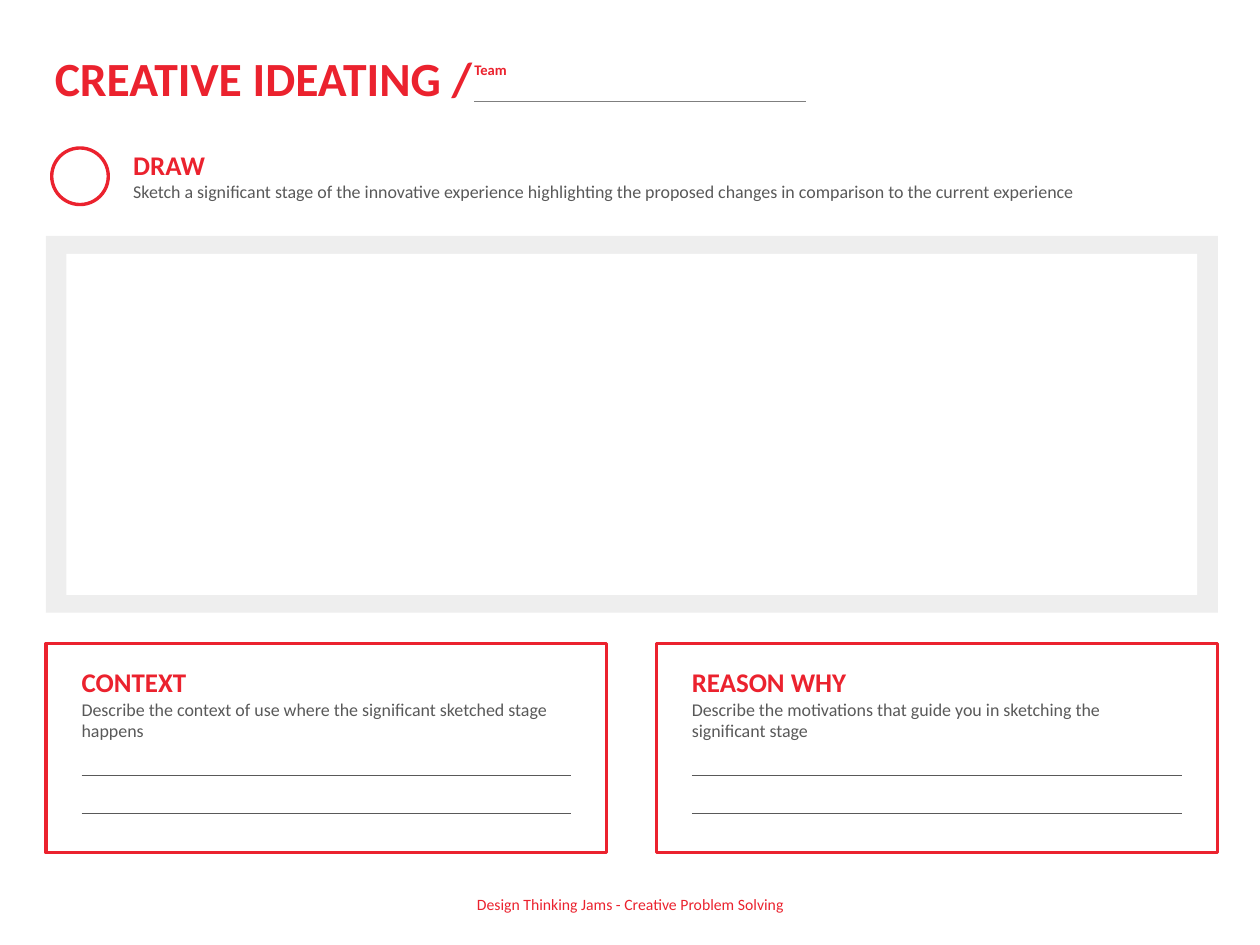
from lxml import etree
from pptx import Presentation
from pptx.dml.color import RGBColor
from pptx.enum import shapes, text
from pptx.oxml import ns
from pptx.util import Pt

COLORS = {"red": "EB222E", "gray": "595959", "rule": "7F7F7F", "white": "FFFFFF"}
FONT = "Calibri"
CARD_TOP, CARD_W, CARD_H, CARD_PAD = 573.1, 499.7, 186.5, 31.7
RULE_TOP, RULE_GAP = 690.5, 33.8
CARDS = [
    (41, "CONTEXT", "Describe the context of use where the significant sketched stage happens"),
    (584.6, "REASON WHY", "Describe the motivations that guide you in sketching the significant stage"),
]


def rgb(name):
    """Return the named colour."""
    return RGBColor.from_string(COLORS[name])


def add_panel(s, x, y, w, h, kind=shapes.MSO_SHAPE.RECTANGLE, fill=None, alpha=None,
              line=None, weight=1):
    """Add a preset shape with an optional fill, opacity and outline."""
    sp = s.shapes.add_shape(kind, Pt(x), Pt(y), Pt(w), Pt(h))
    sp.shadow.inherit = False
    if fill:
        sp.fill.solid()
        sp.fill.fore_color.rgb = rgb(fill)
        if alpha is not None:
            clr = sp._element.spPr.find(".//" + ns.qn("a:srgbClr"))
            etree.SubElement(clr, ns.qn("a:alpha"), val=str(alpha * 1000))
    else:
        sp.fill.background()
    if line:
        sp.line.color.rgb = rgb(line)
        sp.line.width = Pt(weight)
    else:
        sp.line.fill.background()
    return sp


def add_rule(s, x, y, w, color="gray"):
    """Add a thin horizontal writing line."""
    c = s.shapes.add_connector(shapes.MSO_CONNECTOR.STRAIGHT, Pt(x), Pt(y), Pt(x + w), Pt(y))
    c.line.color.rgb = rgb(color)
    c.line.width = Pt(0.75)
    etree.SubElement(c._element.spPr, ns.qn("a:effectLst"))


def add_run(p, content, size=16, color="red", bold=False):
    """Add formatted text to a paragraph."""
    r = p.add_run()
    r.text = content
    r.font.name = FONT
    r.font.size = Pt(size)
    r.font.bold = bold
    r.font.color.rgb = rgb(color)


def add_text(s, x, y, w, h, content, detail=None, inset=7.2, align=None,
             anchor=text.MSO_ANCHOR.TOP, **style):
    """Add a text box with a first line and an optional gray description."""
    tf = s.shapes.add_textbox(Pt(x), Pt(y), Pt(w), Pt(h)).text_frame
    tf.word_wrap = True
    tf.margin_left = Pt(inset)
    tf.vertical_anchor = anchor
    p = tf.paragraphs[0]
    p.alignment = align
    add_run(p, content, **style)
    if detail:
        add_run(tf.add_paragraph(), detail, color="gray")


def add_card(s, x, title, detail):
    """Add an outlined card with a heading and two writing lines."""
    add_panel(s, x, CARD_TOP, CARD_W, CARD_H, line="red", weight=2.75)
    left, width = x + CARD_PAD, CARD_W - 2 * CARD_PAD
    add_text(s, left, 589.7, width, 74.9, title, detail, inset=0, size=24, bold=True)
    for i in range(2):
        add_rule(s, left, RULE_TOP + i * RULE_GAP, width)


def main():
    """Build the worksheet slide."""
    prs = Presentation()
    prs.slide_width, prs.slide_height = Pt(1122.5), Pt(841.7)
    s = prs.slides.add_slide(prs.slide_layouts[6])

    add_panel(s, 41, 210.2, 1044, 335.5, fill="gray", alpha=10)
    add_panel(s, 59.2, 226.1, 1007.3, 303.8, fill="white")

    add_panel(s, 46.1, 131.8, 50.4, 50.4, shapes.MSO_SHAPE.OVAL, line="red", weight=3)
    add_text(s, 111.6, 128.9, 971.3, 55.4, "DRAW",
             "Sketch a significant stage of the innovative experience highlighting "
             "the proposed changes in comparison to the current experience",
             size=24, bold=True)

    add_text(s, 41.8, 39.6, 542.9, 59, "CREATIVE IDEATING /", size=42.4, bold=True)
    add_text(s, 422.6, 51.1, 295.2, 23, "Team", inset=0, size=13, bold=True)
    add_rule(s, 422.6, 90, 295.2, "rule")

    for card in CARDS:
        add_card(s, *card)

    add_text(s, 348.5, 791.3, 426.2, 27.4, "Design Thinking Jams - Creative Problem Solving",
             align=text.PP_ALIGN.CENTER, anchor=text.MSO_ANCHOR.MIDDLE, size=14)
    prs.save("out.pptx")


if __name__ == "__main__":
    main()
